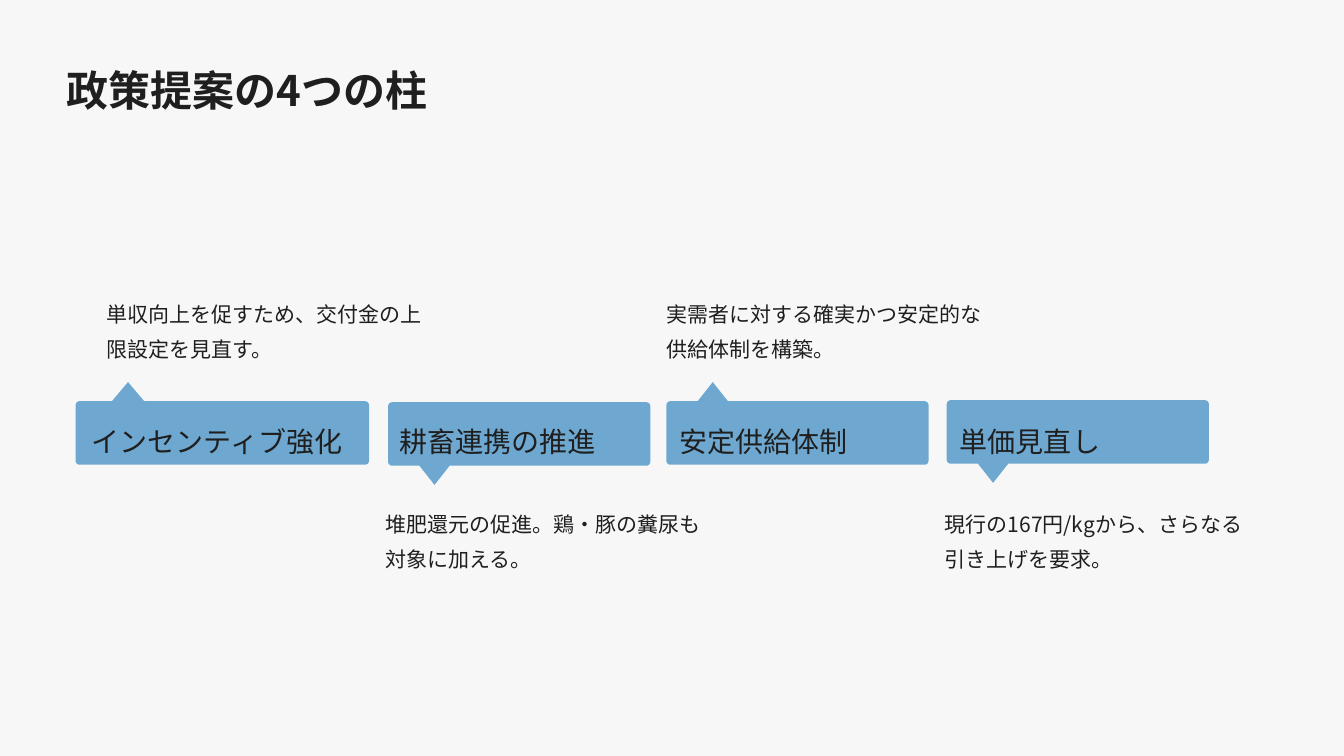
from dataclasses import dataclass
from math import cos, radians, sin

from lxml.etree import SubElement
from pptx import Presentation
from pptx.dml.color import RGBColor
from pptx.enum.text import MSO_ANCHOR
from pptx.oxml.ns import qn
from pptx.util import Inches, Pt

FONT = "Noto Sans CJK SC"
INK, BLUE, PAPER = "1F1F1F", "6EA8D0", "F7F7F7"
BAR_HEIGHT, RADIUS, POINTER_HEIGHT = 0.63, 0.04, 0.19
BODY_INSETS = (0, 0.04, 0.07, 0.04)


@dataclass
class Pillar:
    label: str
    detail: str
    left: float
    top: float
    label_left: float
    detail_left: float
    points_up: bool
    width: float = 2.6
    label_width: float = 2.34
    pointer_x: float = 0.46
    pointer_half: float = 0.15


PILLARS = [
    Pillar("インセンティブ強化", "単収向上を促すため、交付金の上限設定を見直す。",
           0.75, 3.98, 0.91, 1.06, True, 2.91, 2.62, 0.52, 0.16),
    Pillar("耕畜連携の推進", "堆肥還元の促進。鶏・豚の糞尿も対象に加える。",
           3.85, 3.99, 3.96, 3.82, False),
    Pillar("安定供給体制", "実需者に対する確実かつ安定的な供給体制を構築。",
           6.61, 3.98, 6.74, 6.61, True),
    Pillar("単価見直し", "現行の167円/kgから、さらなる引き上げを要求。",
           9.39, 3.97, 9.52, 9.37, False),
]


def rgb(color: str) -> RGBColor:
    return RGBColor.from_string(color)


def add_text(s, text: str, box: tuple, size: int, spacing: float, anchor: MSO_ANCHOR,
             insets: tuple = BODY_INSETS, bold: bool = False) -> None:
    tf = s.shapes.add_textbox(*map(Inches, box)).text_frame
    tf.word_wrap = True
    tf.vertical_anchor = anchor
    tf.margin_left, tf.margin_top, tf.margin_right, tf.margin_bottom = map(Inches, insets)
    tf.text = text
    p = tf.paragraphs[0]
    p.line_spacing = spacing
    r = p.runs[0]
    r.font.size = Pt(size)
    r.font.bold = bold
    r.font.color.rgb = rgb(INK)
    r.font.name = FONT
    SubElement(r._r.get_or_add_rPr(), qn("a:ea")).set("typeface", FONT)


def corner(x: float, y: float, start: int) -> list:
    """Points of a clockwise quarter circle around (x, y)."""
    angles = [radians(start + step * 15) for step in range(7)]
    return [(x + RADIUS * cos(a), y + RADIUS * sin(a)) for a in angles]


def add_bar(s, pillar: Pillar) -> None:
    left, top = pillar.left, pillar.top
    right, bottom = left + pillar.width, top + BAR_HEIGHT
    tip, half = left + pillar.pointer_x, pillar.pointer_half
    up = [(tip - half, top), (tip, top - POINTER_HEIGHT), (tip + half, top)]
    down = [(tip + half, bottom), (tip, bottom + POINTER_HEIGHT), (tip - half, bottom)]
    outline = [
        *corner(left + RADIUS, top + RADIUS, 180),
        *(up if pillar.points_up else []),
        *corner(right - RADIUS, top + RADIUS, 270),
        *corner(right - RADIUS, bottom - RADIUS, 0),
        *([] if pillar.points_up else down),
        *corner(left + RADIUS, bottom - RADIUS, 90),
    ]
    points = [(Inches(x), Inches(y)) for x, y in outline]
    builder = s.shapes.build_freeform(*points[0])
    builder.add_line_segments(points[1:], close=True)
    sp = builder.convert_to_shape()
    sp.shadow.inherit = False
    sp.fill.solid()
    sp.fill.fore_color.rgb = rgb(BLUE)
    sp.line.fill.background()


def add_pillar(s, pillar: Pillar) -> None:
    add_bar(s, pillar)
    add_text(s, pillar.label, (pillar.label_left, 4.07, pillar.label_width, 0.44),
             20, 1.5, MSO_ANCHOR.MIDDLE)
    if pillar.points_up:
        top, height, anchor = 1.57, 2.06, MSO_ANCHOR.BOTTOM
    else:
        top, height, anchor = 4.93, 2, MSO_ANCHOR.TOP
    add_text(s, pillar.detail, (pillar.detail_left, top, 3.21, height), 15, 1.4, anchor)


def main() -> None:
    prs = Presentation()
    prs.slide_width, prs.slide_height = Inches(13.33), Inches(7.5)
    s = prs.slides.add_slide(prs.slide_layouts[6])
    s.background.fill.solid()
    s.background.fill.fore_color.rgb = rgb(PAPER)
    add_text(s, "政策提案の4つの柱", (0.52, 0.29, 12.29, 1), 30, 1.4, MSO_ANCHOR.MIDDLE,
             (0.14, 0.14, 0.06, 0.14), bold=True)
    for pillar in PILLARS:
        add_pillar(s, pillar)
    prs.save("out.pptx")


if __name__ == "__main__":
    main()
